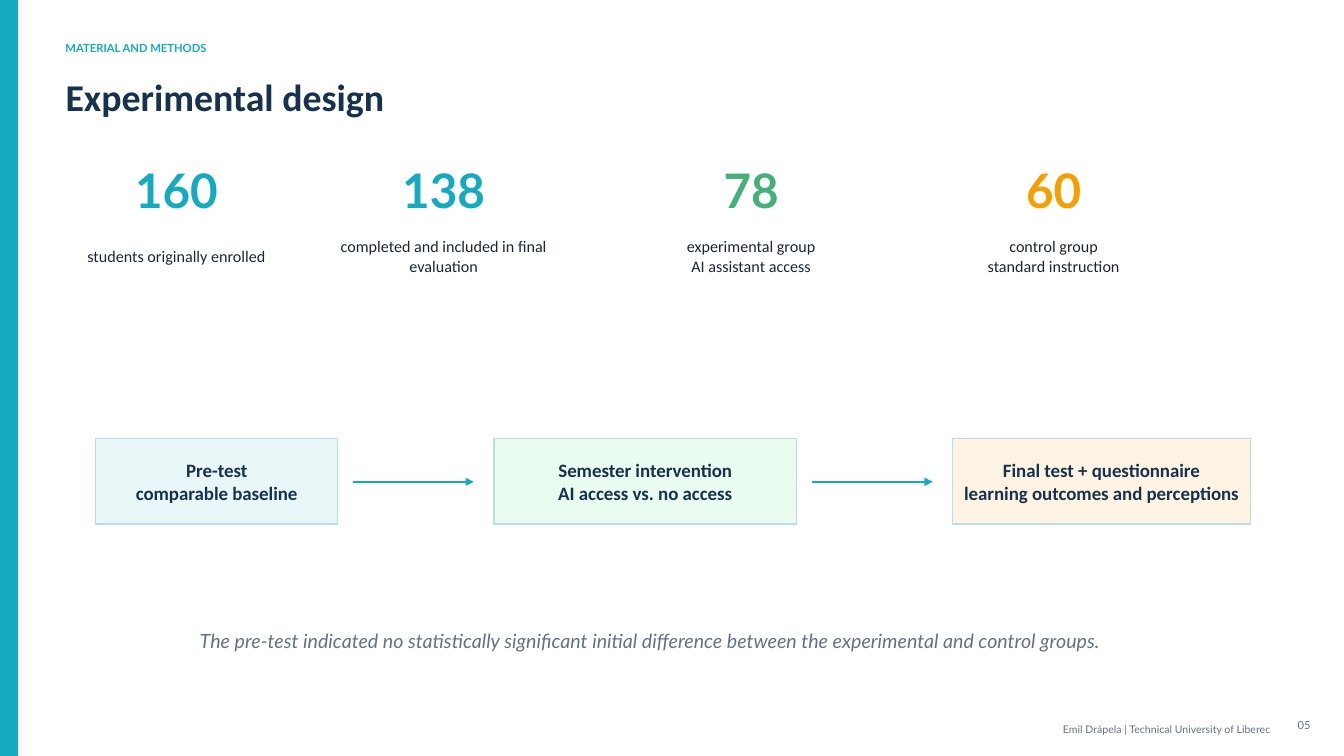
from lxml import etree
from pptx import Presentation
from pptx.dml.color import RGBColor
from pptx.enum.shapes import MSO_CONNECTOR, MSO_SHAPE
from pptx.enum.text import MSO_ANCHOR, MSO_AUTO_SIZE, PP_ALIGN
from pptx.oxml.ns import qn
from pptx.util import Inches, Pt

COLORS = {
    "teal": "15AABF",
    "navy": "17324D",
    "ink": "1C2633",
    "gray": "667085",
    "green": "45B07A",
    "orange": "F59F00",
    "border": "B9DDE6",
    "pale teal": "EAF7F9",
    "pale green": "EAFBF0",
    "pale orange": "FFF4E3",
}
LEFT, CENTER, RIGHT = PP_ALIGN.LEFT, PP_ALIGN.CENTER, PP_ALIGN.RIGHT


def rgb(name):
    return RGBColor.from_string(COLORS[name])


def write(shape, text, size, font, color, align=CENTER, bold=False, italic=False):
    frame = shape.text_frame
    frame.word_wrap = True
    frame.auto_size = MSO_AUTO_SIZE.NONE
    frame.vertical_anchor = MSO_ANCHOR.MIDDLE
    frame.margin_left = frame.margin_top = frame.margin_right = frame.margin_bottom = 0
    frame.text = text
    for paragraph in frame.paragraphs:
        paragraph.alignment = align
        paragraph.font.size = Pt(size)
        paragraph.font.name = font
        paragraph.font.bold = bold
        paragraph.font.italic = italic
        paragraph.font.color.rgb = rgb(color)


presentation = Presentation()
presentation.slide_width = Inches(13.33)
presentation.slide_height = Inches(7.5)
slide = presentation.slides.add_slide(presentation.slide_layouts[5])
shapes = slide.shapes

title = shapes.title
title.left, title.top = Inches(0.65), Inches(0.68)
title.width, title.height = Inches(8.7), Inches(0.55)
write(title, "Experimental design", 27, "Calibri", "navy", LEFT, bold=True)

side_bar = shapes.add_shape(MSO_SHAPE.RECTANGLE, 0, 0, Inches(0.18), Inches(7.5))
side_bar.shadow.inherit = False
side_bar.fill.solid()
side_bar.fill.fore_color.rgb = rgb("teal")
side_bar.line.fill.background()

section = shapes.add_textbox(Inches(0.65), Inches(0.35), Inches(2.8), Inches(0.25))
write(section, "MATERIAL AND METHODS", 8, "Lato", "teal", LEFT, bold=True)

group_sizes = [
    (0.65, 2.2, "160", "students originally enrolled", "teal"),
    (3.05, 2.7, "138", "completed and included in final evaluation", "teal"),
    (6.15, 2.6, "78", "experimental group\nAI assistant access", "green"),
    (9.2, 2.5, "60", "control group\nstandard instruction", "orange"),
]
for left, width, count, description, color in group_sizes:
    number = shapes.add_textbox(Inches(left), Inches(1.55), Inches(width), Inches(0.65))
    write(number, count, 34, "Lato", color, bold=True)
    caption = shapes.add_textbox(Inches(left), Inches(2.23), Inches(width), Inches(0.62))
    write(caption, description, 11.5, "Calibri", "ink")

phases = [
    (0.95, 2.4, "Pre-test\ncomparable baseline", "pale teal"),
    (4.9, 3, "Semester intervention\nAI access vs. no access", "pale green"),
    (9.45, 2.95, "Final test + questionnaire\nlearning outcomes and perceptions", "pale orange"),
]
for left, width, text, fill in phases:
    phase = shapes.add_shape(
        MSO_SHAPE.RECTANGLE, Inches(left), Inches(4.35), Inches(width), Inches(0.85)
    )
    phase.shadow.inherit = False
    phase.fill.solid()
    phase.fill.fore_color.rgb = rgb(fill)
    phase.line.color.rgb = rgb("border")
    phase.line.width = Pt(1)
    write(phase, text, 13.5, "Calibri", "navy", bold=True)

for left, width, text, fill in phases[:-1]:
    start = left + width + 0.15
    arrow = shapes.add_connector(
        MSO_CONNECTOR.STRAIGHT, Inches(start), Inches(4.78), Inches(start + 1.2), Inches(4.78)
    )
    arrow.line.color.rgb = rgb("teal")
    arrow.line.width = Pt(1.2)
    etree.SubElement(arrow.line._get_or_add_ln(), qn("a:tailEnd"), type="triangle")
    etree.SubElement(arrow._element.spPr, qn("a:effectLst"))

finding = shapes.add_textbox(Inches(1), Inches(6.15), Inches(10.9), Inches(0.42))
write(
    finding,
    "The pre-test indicated no statistically significant initial difference "
    "between the experimental and control groups.",
    14, "Lato", "gray", italic=True,
)

credit = shapes.add_textbox(Inches(8.75), Inches(7.12), Inches(3.85), Inches(0.22))
write(credit, "Emil Drápela | Technical University of Liberec", 7.5, "Lato", "gray", RIGHT)

page_number = shapes.add_textbox(Inches(12.65), Inches(7.08), Inches(0.35), Inches(0.22))
write(page_number, "05", 8, "Lato", "gray", RIGHT)

presentation.save("out.pptx")
